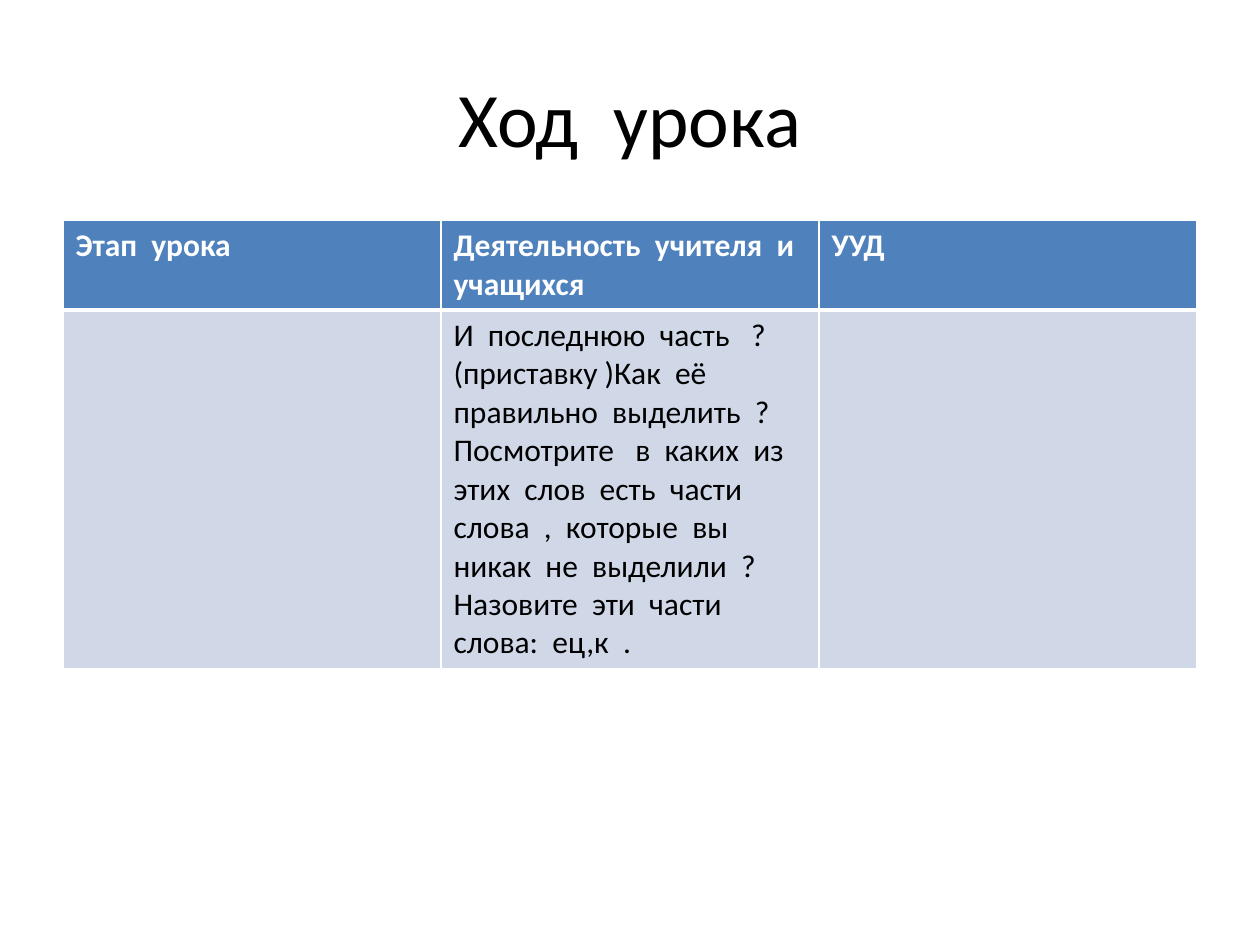
from dataclasses import dataclass

from lxml.etree import SubElement
from pptx import Presentation
from pptx.dml.color import RGBColor as Color
from pptx.enum.text import MSO_ANCHOR as Anchor, PP_ALIGN as Align
from pptx.oxml.ns import qn
from pptx.util import Inches, Pt


@dataclass(frozen=True)
class Theme:
    """Colours and type sizes of the slide."""
    font: str = "Calibri"
    title_size: int = 44
    table_size: int = 18
    ink: str = "000000"
    paper: str = "FFFFFF"
    header: str = "4F81BD"
    body: str = "D0D8E8"
    thin: int = 1
    thick: int = 3


class LessonSlide:
    """Builds the elements of one slide in a single style."""

    def __init__(self, presentation, theme):
        """Add a title-only slide."""
        self.theme = theme
        self.slide = presentation.slides.add_slide(presentation.slide_layouts[5])

    def style(self, paragraph, size, color, bold=False):
        """Set the font of a whole paragraph."""
        font = paragraph.font
        font.name, font.size, font.bold = self.theme.font, Pt(size), bold
        font.color.rgb = Color.from_string(color)

    def title(self, text, left, top, width, height):
        """Place and format the title placeholder."""
        shape = self.slide.shapes.title
        shape.left, shape.top = Inches(left), Inches(top)
        shape.width, shape.height = Inches(width), Inches(height)
        shape.text_frame.text = text
        shape.text_frame.vertical_anchor = Anchor.MIDDLE
        paragraph = shape.text_frame.paragraphs[0]
        paragraph.alignment = Align.CENTER
        self.style(paragraph, self.theme.title_size, self.theme.ink)

    def border(self, cell, side, width):
        """Draw one side of a cell."""
        line = SubElement(cell._tc.get_or_add_tcPr(), qn(f"a:ln{side}"), w=str(Pt(width)))
        fill = SubElement(line, qn("a:solidFill"))
        SubElement(fill, qn("a:srgbClr"), val=self.theme.paper)

    def cell(self, cell, text, is_header):
        """Fill, frame and write one table cell."""
        theme = self.theme
        thick_side = "B" if is_header else "T"
        for side in "LRTB":
            self.border(cell, side, theme.thick if side == thick_side else theme.thin)
        cell.fill.solid()
        cell.fill.fore_color.rgb = Color.from_string(theme.header if is_header else theme.body)
        cell.text = text
        color = theme.paper if is_header else theme.ink
        self.style(cell.text_frame.paragraphs[0], theme.table_size, color, is_header)

    def table(self, rows, left, top, width, row_heights):
        """Add a table with equal columns and a header row."""
        frame = self.slide.shapes.add_table(
            len(rows), len(rows[0]), Inches(left), Inches(top),
            Inches(width), Inches(sum(row_heights)))
        for row_index, (texts, height) in enumerate(zip(rows, row_heights)):
            frame.table.rows[row_index].height = Inches(height)
            for column_index, text in enumerate(texts):
                self.cell(frame.table.cell(row_index, column_index), text, row_index == 0)


def main():
    """Build and save the lesson slide."""
    presentation = Presentation()
    presentation.slide_width, presentation.slide_height = Inches(10), Inches(7.5)
    lesson = LessonSlide(presentation, Theme())
    lesson.title("Ход  урока", 0.5, 0.3, 9, 1.25)
    activity = (
        "И  последнюю  часть   ?  (приставку )Как  её  правильно  выделить  ?"
        "Посмотрите   в  каких  из  этих  слов  есть  части  слова  ,  которые  вы  "
        "никак  не  выделили  ?Назовите  эти  части  слова:  ец,к  .")
    rows = [
        ("Этап  урока", "Деятельность  учителя  и  учащихся", "УУД"),
        ("", activity, ""),
    ]
    lesson.table(rows, 0.5, 1.75, 9, (0.7, 2.8))
    presentation.save("out.pptx")


if __name__ == "__main__":
    main()
